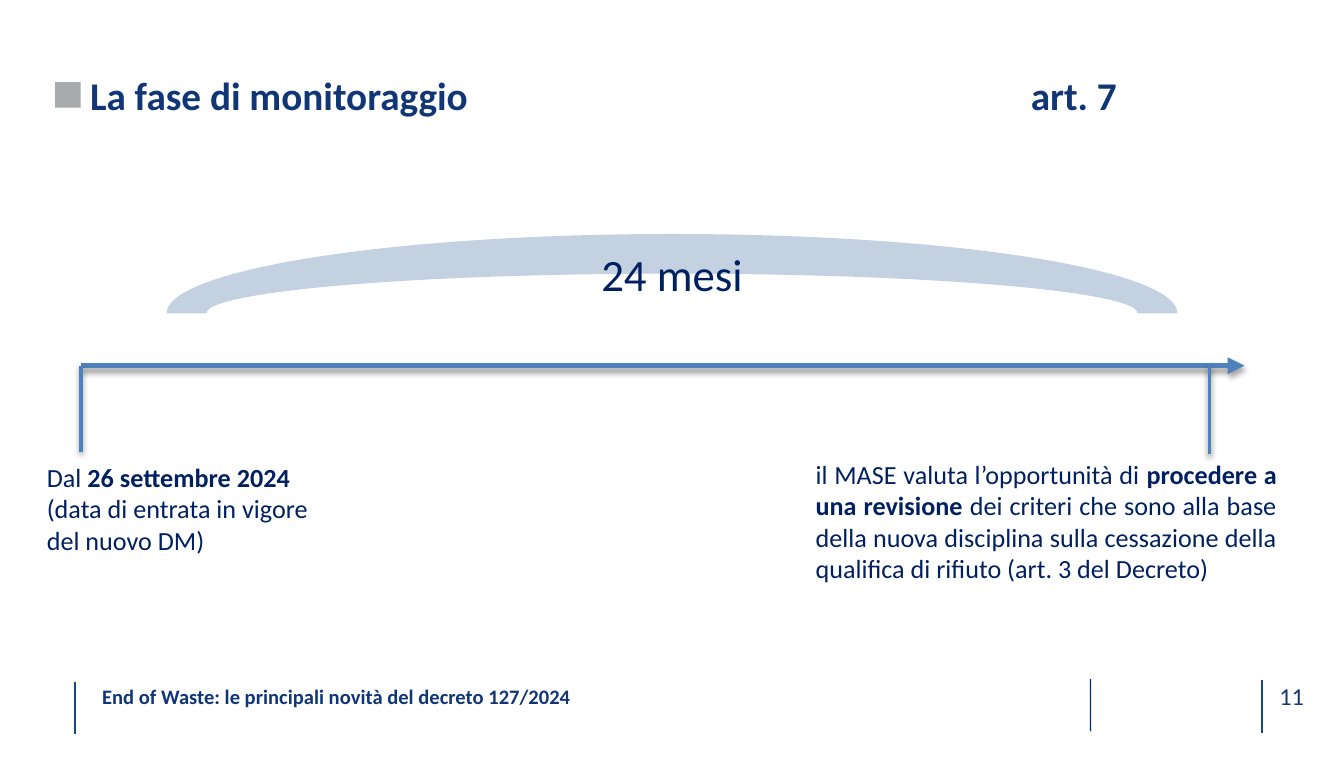
from lxml import etree
from pptx import Presentation
from pptx.dml.color import RGBColor
from pptx.enum import shapes, text
from pptx.oxml import ns
from pptx.util import Inches, Pt

HUES = {
    "title": "103676",
    "body": "002060",
    "rule": "11498A",
    "bar": "002E6E",
    "mark": "939598",
    "line": "4F81BD",
    "shade": "000000",
}
FACE = "Calibri"


def hue(name):
    return RGBColor.from_string(HUES[name])


def sub(node, tag, **attrs):
    return etree.SubElement(node, ns.qn(tag), {k: str(v) for k, v in attrs.items()})


def style(par, size, color, bold=None, align=None):
    par.font.name, par.font.size, par.font.bold = FACE, Pt(size), bold
    par.font.color.rgb = hue(color)
    par.alignment = align


def write(slide, box, pars, size, color, bold=None, align=None, inset=0, tab=None):
    """Add a text box; each paragraph is a list of (words, bold) runs."""
    frame = slide.shapes.add_textbox(*map(Inches, box)).text_frame
    frame.word_wrap = True
    frame.margin_left = frame.margin_right = Inches(inset)
    frame.margin_top = frame.margin_bottom = Inches(inset / 2)
    for i, runs in enumerate(pars):
        par = frame.add_paragraph() if i else frame.paragraphs[0]
        if tab:
            stops = sub(par._p.get_or_add_pPr(), "a:tabLst")
            sub(stops, "a:tab", pos=Inches(tab), algn="l")
        style(par, size, color, bold, align)
        for words, strong in runs:
            run = par.add_run()
            run.text = words
            if strong:
                run.font.bold = True


def block(slide, kind, box, color, alpha=None):
    shape = slide.shapes.add_shape(kind, *map(Inches, box))
    shape.shadow.inherit = False
    shape.fill.solid()
    shape.fill.fore_color.rgb = hue(color)
    shape.line.fill.background()
    if alpha:
        tone = shape.element.spPr.find(".//" + ns.qn("a:srgbClr"))
        sub(tone, "a:alpha", val=alpha * 1000)
    return shape


def line(slide, start, end, color, width, shade=None, arrow=False):
    """Draw a straight line; shade is (alpha percent, distance in points)."""
    ends = map(Inches, (*start, *end))
    link = slide.shapes.add_connector(shapes.MSO_CONNECTOR.STRAIGHT, *ends)
    link.line.color.rgb, link.line.width = hue(color), Pt(width)
    if arrow:
        sub(link.line._get_or_add_ln(), "a:tailEnd", type="triangle")
    effects = sub(link.element.spPr, "a:effectLst")
    if shade:
        alpha, gap = shade
        cast = sub(effects, "a:outerShdw", blurRad=Pt(3.1), dist=Pt(gap),
                   dir=90 * 60000, rotWithShape=0)
        tone = sub(cast, "a:srgbClr", val=HUES["shade"])
        sub(tone, "a:alpha", val=alpha * 1000)


def header(slide, x, y, w, h):
    block(slide, shapes.MSO_SHAPE.RECTANGLE, (x, y + 0.08, 0.19, 0.19), "mark", 80)
    write(slide, (x + 0.26, y, w - 0.26, h),
          [[("La fase di monitoraggio\tart. 7", False)]],
          21, "title", bold=True, tab=7)


def timeline(slide, x, y, w, h):
    axis = y + 0.98
    left, right = x + 0.35, x + 8.75
    line(slide, (left, axis), (x + w - 0.34, axis), "line", 3, (35, 1.8), True)
    for at, drop in ((left, 0.64), (right, 0.66)):
        line(slide, (at, axis), (at, axis + drop), "line", 2, (38, 1.6))

    arc = block(slide, shapes.MSO_SHAPE.BLOCK_ARC, (x + 0.99, y, 7.52, 1.18), "rule", 25)
    frame = arc.text_frame
    frame.margin_left = frame.margin_right = frame.margin_top = frame.margin_bottom = 0
    frame.vertical_anchor = text.MSO_ANCHOR.MIDDLE
    frame.text = "24 mesi"
    style(frame.paragraphs[0], 24, "body", align=text.PP_ALIGN.CENTER)

    write(slide, (x, y + 1.64, 2.32, 0.81),
          [[("Dal ", False), ("26 settembre 2024", True)],
           [("(data di entrata in vigore del nuovo DM)", False)]],
          14, "body", inset=0.1)
    write(slide, (x + w - 3.63, y + 1.62, 3.63, h - 1.62),
          [[("il MASE valuta l’opportunità di ", False),
            ("procedere a una revisione", True),
            (" dei criteri che sono alla base della nuova disciplina sulla "
             "cessazione della qualifica di rifiuto (art. 3 del Decreto)", False)]],
          14, "body", align=text.PP_ALIGN.JUSTIFY, inset=0.1)


def footer(slide, x, y, w, h):
    for at, top in ((x, y + 0.02), (x + 8.83, y + 0.01)):
        line(slide, (at, top), (at, top + h), "rule", 1)
    block(slide, shapes.MSO_SHAPE.RECTANGLE, (x + 7.55, y, 0.01, h), "bar")
    write(slide, (x + 0.2, y + 0.04, 4.42, 0.19),
          [[("End of Waste: le principali novità del decreto 127/2024", False)]],
          11, "title", bold=True)
    write(slide, (x + w - 0.38, y + 0.02, 0.38, 0.24), [[("11", False)]],
          13, "title", align=text.PP_ALIGN.CENTER)


def main():
    deck = Presentation()
    deck.slide_width, deck.slide_height = Inches(10), Inches(5.63)
    slide = deck.slides.add_slide(deck.slide_layouts[6])
    header(slide, 0.41, 0.53, 8.73, 0.35)
    timeline(slide, 0.25, 1.74, 9.35, 2.66)
    footer(slide, 0.56, 5.05, 9.24, 0.39)
    deck.save("out.pptx")


if __name__ == "__main__":
    main()
